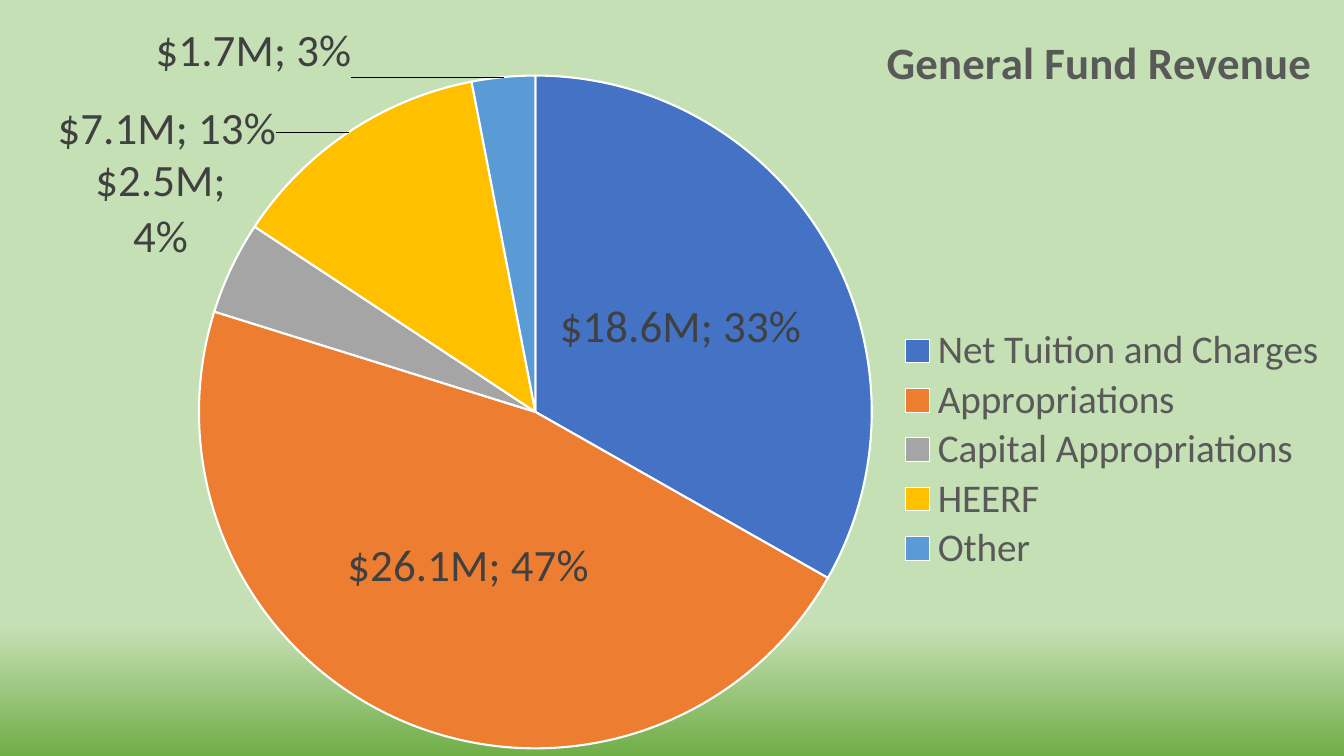
from dataclasses import dataclass

from lxml.etree import SubElement
from pptx import Presentation
from pptx.chart.chart import Chart
from pptx.chart.data import CategoryChartData
from pptx.dml.color import RGBColor
from pptx.enum.chart import XL_CHART_TYPE, XL_LABEL_POSITION, XL_LEGEND_POSITION
from pptx.oxml import parse_xml
from pptx.oxml.ns import nsdecls, qn
from pptx.util import Pt

FONT = "Calibri"
MONEY = '"$"0.0,,"M"'
STOPS = [(0, "C5E0B4"), (83, "C5E0B4"), (100, "70AD47")]


@dataclass
class Slice:
    name: str
    value: int
    color: str
    shift: tuple[float, float] | None = None  # label offset, when outside the pie


SLICES = [
    Slice("Net Tuition and Charges", 18600000, "4472C4"),
    Slice("Appropriations", 26100000, "ED7D31"),
    Slice("Capital Appropriations", 2500000, "A5A5A5", (0, 0)),
    Slice("HEERF", 7100000, "FFC000", (-0.05, 0.04)),
    Slice("Other", 1700000, "5B9BD5", (-0.11, 0.01)),
]


def rgb(code: str) -> RGBColor:
    return RGBColor.from_string(code)


def style(font, size: int, color: str, bold: bool = False) -> None:
    font.name, font.size, font.bold = FONT, Pt(size), bold
    font.color.rgb = rgb(color)


def place(node, index: int = 1, **parts) -> None:
    """Give a chart part a manual layout, as fractions of the chart."""
    old = node.find(qn("c:layout"))
    if old is not None:
        node.remove(old)
    layout = parse_xml(f"<c:layout {nsdecls('c')}><c:manualLayout/></c:layout>")
    for tag, val in parts.items():
        SubElement(layout[0], qn(f"c:{tag}")).set("val", str(val))
    node.insert(index, layout)


def paint(chart: Chart) -> None:
    """Fill the chart area with the vertical gradient."""
    stops = "".join(
        f'<a:gs pos="{pos * 1000}"><a:srgbClr val="{code}"/></a:gs>'
        for pos, code in STOPS
    )
    area = parse_xml(
        f"<c:spPr {nsdecls('c', 'a')}><a:gradFill><a:gsLst>{stops}</a:gsLst>"
        '<a:lin ang="5400000" scaled="0"/></a:gradFill>'
        "<a:ln><a:noFill/></a:ln></c:spPr>"
    )
    chart.element.find(qn("c:txPr")).addprevious(area)


def label(chart: Chart) -> None:
    """Show value and percent on each slice."""
    series = chart.plots[0].series[0]
    labels = series.data_labels
    labels.show_value = labels.show_percentage = True
    labels.position = XL_LABEL_POSITION.CENTER
    style(labels.font, 32, "404040")

    for num, part in enumerate(SLICES):
        point = series.points[num]
        point.format.fill.solid()
        point.format.fill.fore_color.rgb = rgb(part.color)
        point.format.line.color.rgb = rgb("FFFFFF")
        point.format.line.width = Pt(1.5)
        if part.shift:
            style(point.data_label.font, 32, "404040")
            point.data_label.position = XL_LABEL_POSITION.OUTSIDE_END

    moves = [part.shift for part in SLICES if part.shift]
    for node, (x, y) in zip(chart.element.iter(qn("c:dLbl")), moves):
        node.find(qn("c:showPercent")).set("val", "1")
        if x or y:
            place(node, x=x, y=y)
    for size in chart.element.iter(qn("c:showBubbleSize")):
        mark = parse_xml(f"<c:separator {nsdecls('c')}>; </c:separator>")
        size.addnext(mark)


def build() -> None:
    deck = Presentation()
    deck.slide_width, deck.slide_height = Pt(960), Pt(540)
    slide = deck.slides.add_slide(deck.slide_layouts[6])

    data = CategoryChartData(number_format=MONEY)
    data.categories = [part.name for part in SLICES]
    data.add_series("Series 1", [part.value for part in SLICES])
    chart = slide.shapes.add_chart(
        XL_CHART_TYPE.PIE, Pt(0), Pt(0), Pt(980.64), Pt(540), data
    ).chart
    style(chart.font, 10, "000000")
    paint(chart)
    label(chart)

    chart.has_title = True
    title = chart.chart_title
    run = title.text_frame.paragraphs[0].add_run()
    run.text = "General Fund Revenue"
    style(run.font, 32, "595959", True)
    place(title.element, xMode="edge", yMode="edge", x=0.64, y=0.03)

    chart.has_legend = True
    chart.legend.position = XL_LEGEND_POSITION.RIGHT
    chart.legend.include_in_layout = False
    style(chart.legend.font, 28, "595959")
    place(chart.element.find(f".//{qn('c:legend')}"),
          xMode="edge", yMode="edge", x=0.65, y=0.43, w=0.32, h=0.33)
    place(chart.element.find(f".//{qn('c:plotArea')}"), 0, layoutTarget="inner",
          xMode="edge", yMode="edge", x=0.14, y=0.1, w=0.5, h=0.89)

    deck.save("out.pptx")


if __name__ == "__main__":
    build()
